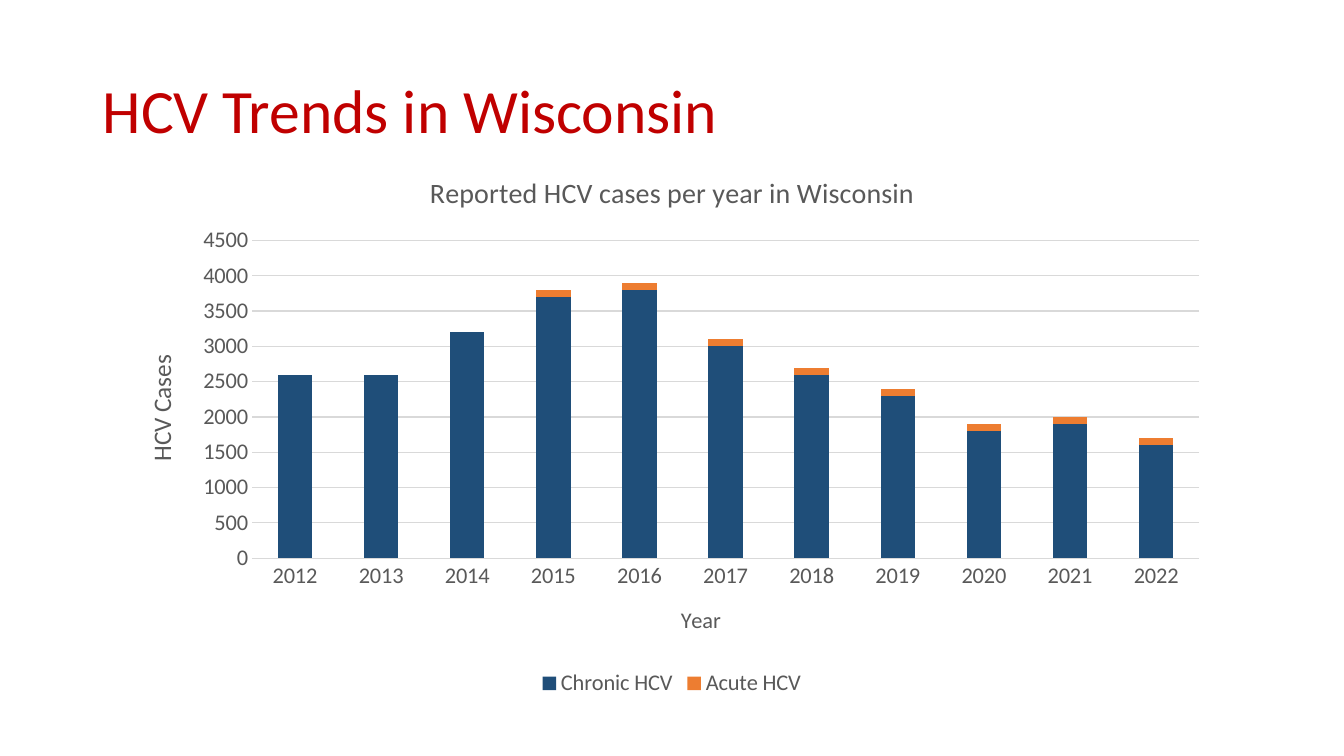
import dataclasses
import typing

import lxml.etree
import pptx
import pptx.chart.data
import pptx.dml.color
import pptx.dml.line
import pptx.enum.chart
import pptx.enum.text
import pptx.oxml.ns
import pptx.util

RED = pptx.dml.color.RGBColor(0xC0, 0x00, 0x00)
NAVY = pptx.dml.color.RGBColor(0x1F, 0x4E, 0x79)
ORANGE = pptx.dml.color.RGBColor(0xED, 0x7D, 0x31)
GRAY = pptx.dml.color.RGBColor(0x59, 0x59, 0x59)
LIGHT_GRAY = pptx.dml.color.RGBColor(0xD9, 0xD9, 0xD9)
FONT_NAME = "Calibri"
SLIDE_WIDTH = pptx.util.Inches(13.33)
SLIDE_HEIGHT = pptx.util.Inches(7.5)


@dataclasses.dataclass(frozen=True)
class PercentBox:
    left: float
    top: float
    width: float = 0
    height: float = 0

    def on_slide(self) -> tuple[int, int, int, int]:
        return (
            int(SLIDE_WIDTH * self.left / 100),
            int(SLIDE_HEIGHT * self.top / 100),
            int(SLIDE_WIDTH * self.width / 100),
            int(SLIDE_HEIGHT * self.height / 100),
        )


@dataclasses.dataclass(frozen=True)
class CaseSeries:
    name: str
    color: pptx.dml.color.RGBColor
    values: tuple[int, ...]


@dataclasses.dataclass(frozen=True)
class ChartLabel:
    text: str
    size: int
    box: PercentBox


HEADING_BOX = PercentBox(6.9, 5.33, 86.25, 19.33)
CHART_BOX = PercentBox(9.15, 20.53, 81.67, 72.27)
PLOT_BOX = PercentBox(11.75, 15.6, 86.3, 58.2)
CHART_TITLE = ChartLabel("Reported HCV cases per year in Wisconsin", 20, PercentBox(27.5, 2.35))
YEAR_TITLE = ChartLabel("Year", 16, PercentBox(50.45, 81.6))
CASES_TITLE = ChartLabel("HCV Cases", 18, PercentBox(1.5, 35.7))
YEARS = [str(year) for year in range(2012, 2023)]
CASES = (
    CaseSeries("Chronic HCV", NAVY,
               (2600, 2600, 3200, 3700, 3800, 3000, 2600, 2300, 1800, 1900, 1600)),
    CaseSeries("Acute HCV", ORANGE,
               (0, 0, 0, 100, 100, 100, 100, 100, 100, 100, 100)),
)


def style_font(font: typing.Any, size: int, color: pptx.dml.color.RGBColor) -> None:
    font.name = FONT_NAME
    font.size = pptx.util.Pt(size)
    font.bold = False
    font.color.rgb = color


def place_in_chart(element: typing.Any, box: PercentBox, index: int) -> None:
    qualified = pptx.oxml.ns.qn
    for previous in element.findall(qualified("c:layout")):
        element.remove(previous)
    layout = lxml.etree.Element(qualified("c:layout"))
    manual = lxml.etree.SubElement(layout, qualified("c:manualLayout"))
    settings = {"xMode": "edge", "yMode": "edge", "x": box.left / 100, "y": box.top / 100}
    if box.width:
        settings = {"layoutTarget": "inner", **settings,
                    "w": box.width / 100, "h": box.height / 100}
    for name, value in settings.items():
        lxml.etree.SubElement(manual, qualified(f"c:{name}")).set("val", str(value))
    element.insert(index, layout)


def write_label(title: typing.Any, label: ChartLabel) -> None:
    paragraph = title.text_frame.paragraphs[0]
    paragraph.text = label.text
    style_font(paragraph.runs[0].font, label.size, GRAY)
    place_in_chart(title._element, label.box, 1)


def style_axis(axis: typing.Any, label: ChartLabel) -> None:
    axis.major_tick_mark = pptx.enum.chart.XL_TICK_MARK.NONE
    axis.minor_tick_mark = pptx.enum.chart.XL_TICK_MARK.NONE
    style_font(axis.tick_labels.font, 16, GRAY)
    write_label(axis.axis_title, label)


def style_line(line: pptx.dml.line.LineFormat) -> None:
    line.color.rgb = LIGHT_GRAY
    line.width = pptx.util.Pt(0.75)


def add_heading(slide: typing.Any) -> None:
    text_frame = slide.shapes.add_textbox(*HEADING_BOX.on_slide()).text_frame
    text_frame.word_wrap = True
    text_frame.vertical_anchor = pptx.enum.text.MSO_ANCHOR.MIDDLE
    text_frame.text = "HCV Trends in Wisconsin"
    paragraph = text_frame.paragraphs[0]
    paragraph.line_spacing = 0.9
    style_font(paragraph.runs[0].font, 44, RED)


def add_cases_chart(slide: typing.Any) -> None:
    data = pptx.chart.data.CategoryChartData()
    data.categories = YEARS
    for cases in CASES:
        data.add_series(cases.name, cases.values)
    chart = slide.shapes.add_chart(
        pptx.enum.chart.XL_CHART_TYPE.COLUMN_STACKED, *CHART_BOX.on_slide(), data
    ).chart
    style_font(chart.font, 10, GRAY)
    write_label(chart.chart_title, CHART_TITLE)
    chart.chart_title.include_in_layout = False

    plot = chart.plots[0]
    plot.gap_width = 150
    plot.overlap = 100
    plot.vary_by_categories = False
    for series, cases in zip(plot.series, CASES):
        series.format.fill.solid()
        series.format.fill.fore_color.rgb = cases.color

    style_axis(chart.category_axis, YEAR_TITLE)
    style_line(chart.category_axis.format.line)
    value_axis = chart.value_axis
    style_axis(value_axis, CASES_TITLE)
    rotation = value_axis.axis_title.text_frame._txBody.bodyPr
    rotation.set("rot", "-5400000")
    rotation.set("vert", "horz")
    value_axis.minimum_scale = 0
    value_axis.maximum_scale = 4500
    value_axis.major_unit = 500
    value_axis.format.line.fill.background()
    style_line(value_axis.major_gridlines.format.line)

    chart.has_legend = True
    chart.legend.position = pptx.enum.chart.XL_LEGEND_POSITION.BOTTOM
    chart.legend.include_in_layout = False
    style_font(chart.legend.font, 16, GRAY)
    place_in_chart(chart._chartSpace.chart.plotArea, PLOT_BOX, 0)


def main() -> None:
    presentation = pptx.Presentation()
    presentation.slide_width = SLIDE_WIDTH
    presentation.slide_height = SLIDE_HEIGHT
    slide = presentation.slides.add_slide(presentation.slide_layouts[6])
    add_heading(slide)
    add_cases_chart(slide)
    presentation.save("out.pptx")


if __name__ == "__main__":
    main()
